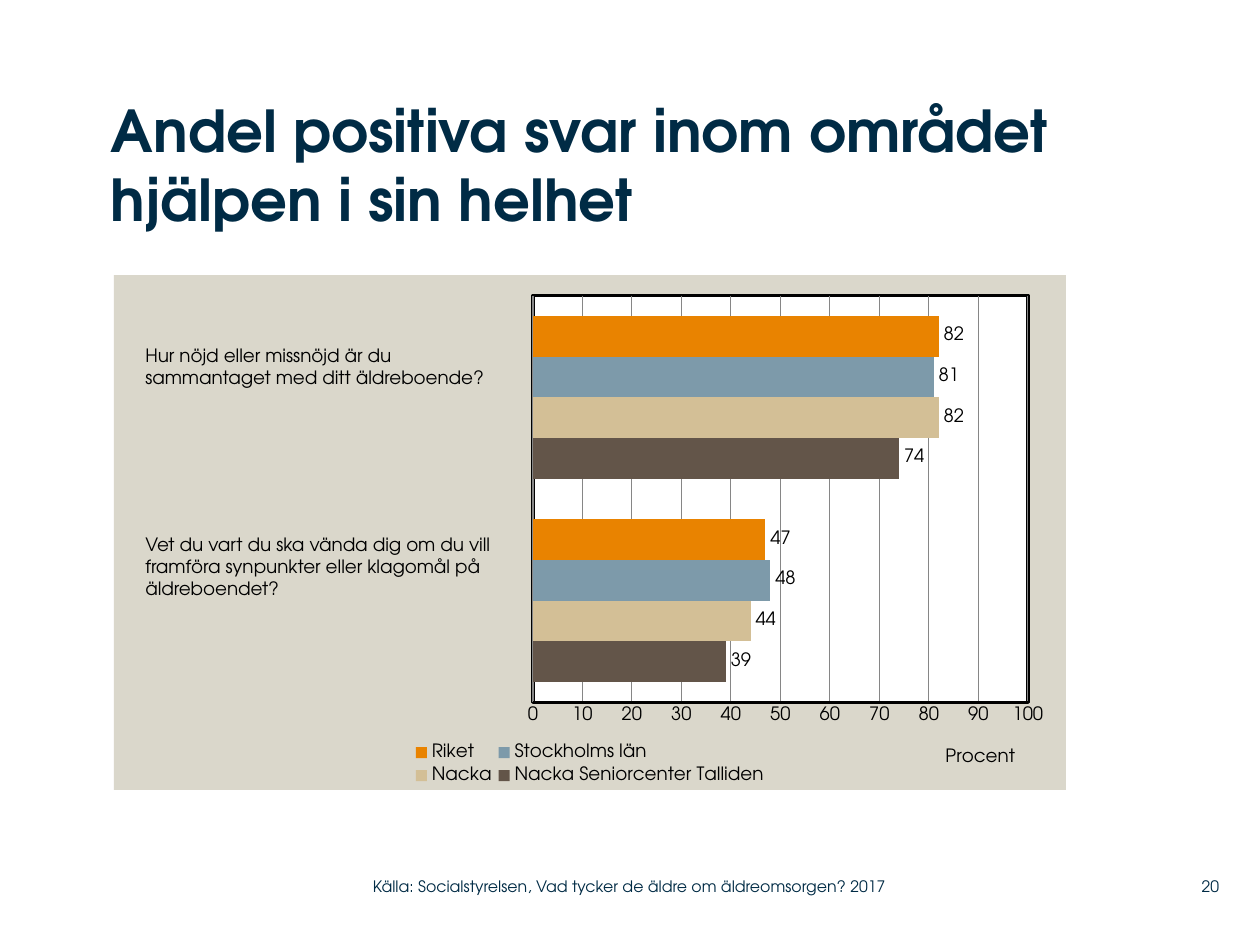
from dataclasses import dataclass

from lxml import etree
from pptx import Presentation
from pptx import util as u
from pptx.chart import data as chart_data
from pptx.dml.color import RGBColor
from pptx.enum import chart as ch, text as tx
from pptx.oxml import ns

PX_PER_INCH = 126


@dataclass(frozen=True)
class Theme:
    """Colours, font and type sizes of the slide."""
    font: str = "TeX Gyre Adventor"
    navy: str = "002B45"
    black: str = "000000"
    white: str = "FFFFFF"
    panel: str = "DAD7CB"
    grid: str = "868686"
    title: float = 33
    body: float = 10.5
    footer: float = 9


THEME = Theme()
CATEGORIES = ["1", "2"]
SERIES = [
    ("Nacka Seniorcenter Talliden", (39, 74), "635549"),
    ("Nacka", (44, 82), "D3BF96"),
    ("Stockholms län", (48, 81), "7D9AAA"),
    ("Riket", (47, 82), "E98300"),
]


def px(length):
    """Turn a length in px into EMU."""
    return u.Inches(length / PX_PER_INCH)


def style_font(font, size, color, bold=False):
    """Apply the theme font with a size, colour and weight."""
    font.name = THEME.font
    font.size = u.Pt(size)
    font.bold = bold
    font.color.rgb = RGBColor.from_string(color)


def add_text(slide, content, box, size=THEME.body, color=THEME.black, bold=False,
             align=tx.PP_ALIGN.LEFT, anchor=tx.MSO_ANCHOR.TOP, inset=(0, 0)):
    """Add a wrapping text box, one paragraph for each line of content."""
    frame = slide.shapes.add_textbox(*map(px, box)).text_frame
    frame.word_wrap = True
    frame.vertical_anchor = anchor
    frame.margin_left = frame.margin_right = u.Inches(inset[0])
    frame.margin_top = frame.margin_bottom = u.Inches(inset[1])
    frame.text = content
    for paragraph in frame.paragraphs:
        paragraph.alignment = align
        for run in paragraph.runs:
            style_font(run.font, size, color, bold)


def set_layout(region, after=None, inner=False, **place):
    """Give a chart region a manual layout in fractions of the chart."""
    for old in region.findall(ns.qn("c:layout")):
        region.remove(old)
    layout = etree.Element(ns.qn("c:layout"))
    manual = etree.SubElement(layout, ns.qn("c:manualLayout"))
    values = {"layoutTarget": "inner"} if inner else {}
    values.update(xMode="edge", yMode="edge", **place)
    for tag, value in values.items():
        etree.SubElement(manual, ns.qn(f"c:{tag}")).set("val", str(value))
    region.insert(0 if after is None else region.index(region.find(ns.qn(after))) + 1, layout)


def area_format(fill, line=None, width=0):
    """Return the shape properties of a chart area."""
    props = etree.Element(ns.qn("c:spPr"))
    outline = etree.Element(ns.qn("a:ln"))
    for parent, color in ((props, fill), (outline, line)):
        kind = etree.SubElement(parent, ns.qn("a:solidFill" if color else "a:noFill"))
        if color:
            etree.SubElement(kind, ns.qn("a:srgbClr")).set("val", color)
    if line:
        outline.set("w", str(u.Pt(width)))
    props.append(outline)
    return props


def style_value_axis(axis):
    """Scale the value axis and format its line, grid and title."""
    axis.minimum_scale, axis.maximum_scale, axis.major_unit = 0, 100, 10
    axis.major_tick_mark = axis.minor_tick_mark = ch.XL_TICK_MARK.NONE
    axis.format.line.color.rgb = RGBColor.from_string(THEME.black)
    axis.format.line.width = u.Pt(2)
    grid = axis.major_gridlines.format.line
    grid.color.rgb = RGBColor.from_string(THEME.grid)
    grid.width = u.Pt(0.75)
    style_font(axis.tick_labels.font, THEME.body, THEME.black)
    frame = axis.axis_title.text_frame
    frame.text = "Procent"
    style_font(frame.paragraphs[0].runs[0].font, THEME.body, THEME.black)
    set_layout(axis.axis_title.element, "c:tx", x=0.87, y=0.91)


def add_answers_chart(slide, box):
    """Add the bar chart of positive answers."""
    answers = chart_data.CategoryChartData(number_format="0")
    answers.categories = CATEGORIES
    for name, values, _ in SERIES:
        answers.add_series(name, values)
    chart = slide.shapes.add_chart(
        ch.XL_CHART_TYPE.BAR_CLUSTERED, *map(px, box), answers).chart
    chart.has_title = False
    style_font(chart.font, THEME.body, THEME.black)

    plot = chart.plots[0]
    plot.gap_width, plot.overlap, plot.vary_by_categories = 100, 0, False
    for series, (_, _, color) in zip(plot.series, SERIES):
        series.format.fill.solid()
        series.format.fill.fore_color.rgb = RGBColor.from_string(color)
        labels = series.data_labels
        labels.show_value = True
        labels.position = ch.XL_LABEL_POSITION.OUTSIDE_END
        style_font(labels.font, THEME.body, THEME.black)

    chart.category_axis.visible = False
    style_value_axis(chart.value_axis)

    chart.has_legend = True
    chart.legend.position = ch.XL_LEGEND_POSITION.BOTTOM
    chart.legend.include_in_layout = False
    style_font(chart.legend.font, THEME.body, THEME.black)

    root = chart.element.find(ns.qn("c:chart"))
    plot_area = root.find(ns.qn("c:plotArea"))
    set_layout(plot_area, inner=True, x=0.44, y=0.04, w=0.52, h=0.79)
    plot_area.append(area_format(THEME.white, THEME.black, 2))
    set_layout(root.find(ns.qn("c:legend")), "c:legendPos", x=0.31, y=0.9, w=0.38, h=0.1)
    root.addnext(area_format(THEME.panel))


def add_survey(slide, box):
    """Add the chart and the two questions beside its bars."""
    left, top, _, _ = box
    add_answers_chart(slide, box)
    questions = [
        ("Hur nöjd eller missnöjd är du\nsammantaget med ditt äldreboende?", 63, 57),
        ("Vet du vart du ska vända dig om du vill framföra synpunkter "
         "eller klagomål på äldreboendet?", 252, 79),
    ]
    for question, offset, height in questions:
        add_text(slide, question, (left + 19, top + offset, 375, height), inset=(0.1, 0.05))


def add_footer(slide, box):
    """Add the source and the page number."""
    left, top, width, height = box
    style = dict(size=THEME.footer, color=THEME.navy, anchor=tx.MSO_ANCHOR.MIDDLE)
    add_text(slide, "Källa: Socialstyrelsen, Vad tycker de äldre om äldreomsorgen? 2017",
             (left, top, 558, height), **style)
    add_text(slide, "20", (left + width - 59, top, 59, height),
             align=tx.PP_ALIGN.RIGHT, **style)


def main():
    """Build the slide and save it."""
    deck = Presentation()
    deck.slide_width, deck.slide_height = px(1260), px(945)
    slide = deck.slides.add_slide(deck.slide_layouts[6])
    add_text(slide, "Andel positiva svar inom området hjälpen i sin helhet",
             (111, 95, 958, 179), size=THEME.title, color=THEME.navy, bold=True)
    add_survey(slide, (114, 275, 952, 515))
    add_footer(slide, (373, 868, 846, 37))
    deck.save("out.pptx")


if __name__ == "__main__":
    main()
